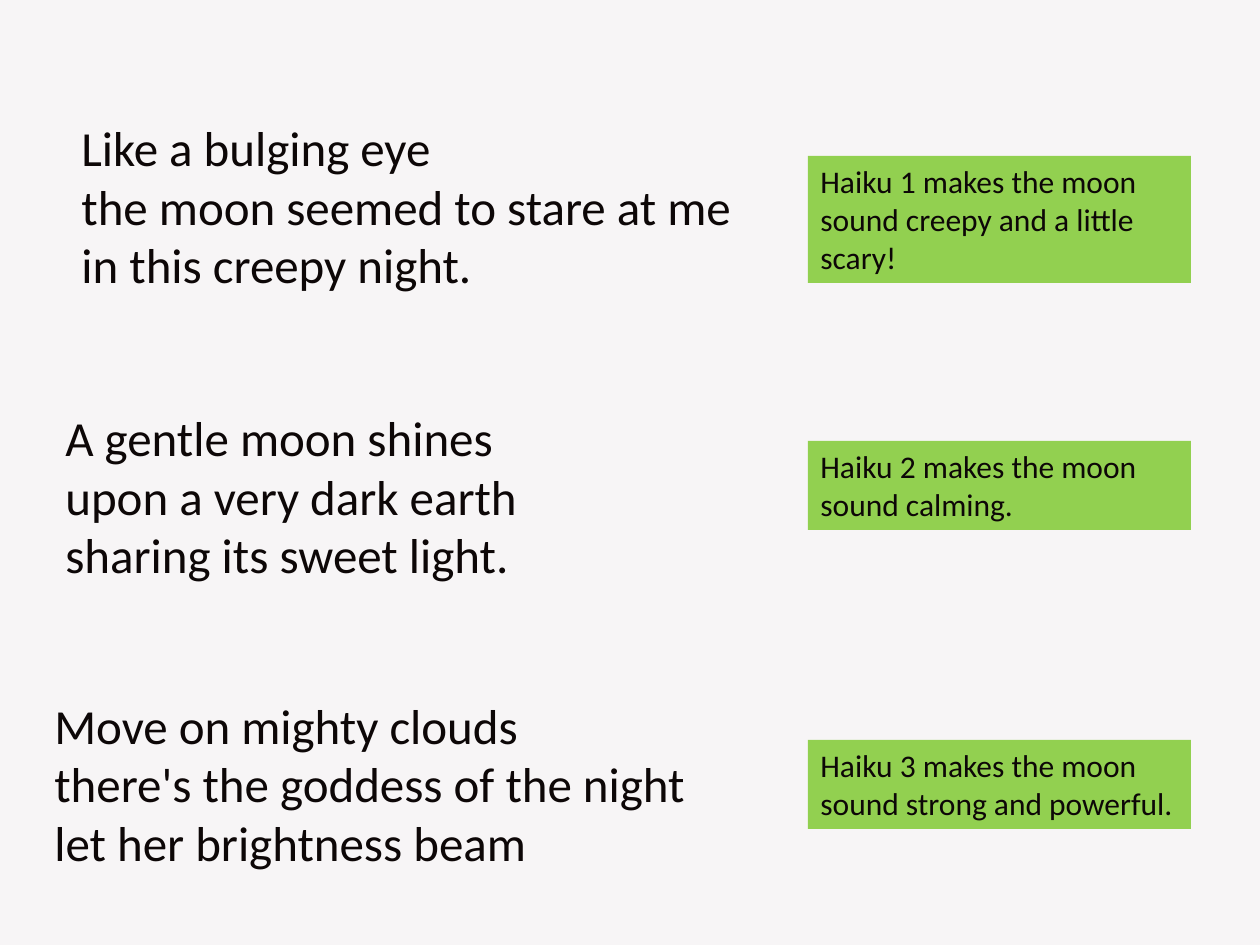
from pptx import Presentation
from pptx import util as u
from pptx.dml.color import RGBColor
from pptx.enum import shapes, text

BACKGROUND = RGBColor(0xF7, 0xF5, 0xF6)
INK = RGBColor(0x0D, 0x07, 0x07)
GREEN = RGBColor(0x92, 0xD0, 0x50)

FONT = "Calibri"
PX_PER_INCH = 126
NOTE_LEFT, NOTE_WIDTH = 808, 383
HAIKU_HEIGHT = 190

# Each haiku: left, top, width, paragraphs made of lines
HAIKUS = [
    (69, 111, 684, [["Like a bulging eye", "the moon seemed to stare at me",
                     "in this creepy night."]]),
    (53, 401, 513, [["A gentle moon shines"],
                    ["upon a very dark earth sharing its sweet light."]]),
    (42, 689, 679, [["Move on mighty clouds", "there's the goddess of the night",
                     "let her brightness beam"]]),
]

# Each note: top, height, wording
NOTES = [
    (156, 127, "Haiku 1 makes the moon sound creepy and a little scary!"),
    (441, 89, "Haiku 2 makes the moon sound calming."),
    (740, 89, "Haiku 3 makes the moon sound strong and powerful."),
]


def px(*lengths):
    return [u.Inches(length / PX_PER_INCH) for length in lengths]


class Painter:
    """Holds the text style and the slide being filled."""

    def __init__(self, page):
        self.page = page
        self.font = FONT
        self.ink = INK

    def background(self, color):
        fill = self.page.background.fill
        fill.solid()
        fill.fore_color.rgb = color

    def add_text(self, shape, paragraphs, size):
        """Fill a shape with paragraphs, each a list of lines."""
        frame = shape.text_frame
        frame.word_wrap = True
        frame.auto_size = text.MSO_AUTO_SIZE.SHAPE_TO_FIT_TEXT
        frame.vertical_anchor = text.MSO_ANCHOR.TOP
        for index, lines in enumerate(paragraphs):
            para = frame.add_paragraph() if index else frame.paragraphs[0]
            para.alignment = text.PP_ALIGN.LEFT
            for number, line in enumerate(lines):
                if number:
                    para.add_line_break()
                span = para.add_run()
                span.text = line
                span.font.name = self.font
                span.font.size = u.Pt(size)
                span.font.color.rgb = self.ink

    def haiku(self, left, top, width, paragraphs):
        box = self.page.shapes.add_textbox(*px(left, top, width, HAIKU_HEIGHT))
        self.add_text(box, paragraphs, 28)

    def note(self, top, height, wording):
        box = self.page.shapes.add_shape(
            shapes.MSO_SHAPE.RECTANGLE, *px(NOTE_LEFT, top, NOTE_WIDTH, height))
        box.shadow.inherit = False
        box.fill.solid()
        box.fill.fore_color.rgb = GREEN
        box.line.fill.background()
        self.add_text(box, [[wording]], 18)


def main():
    deck = Presentation()
    deck.slide_width, deck.slide_height = px(1260, 945)
    blank_layout = deck.slide_layouts[6]
    painter = Painter(deck.slides.add_slide(blank_layout))
    painter.background(BACKGROUND)
    for haiku in HAIKUS:
        painter.haiku(*haiku)
    for note in NOTES:
        painter.note(*note)
    deck.save("out.pptx")


if __name__ == "__main__":
    main()
